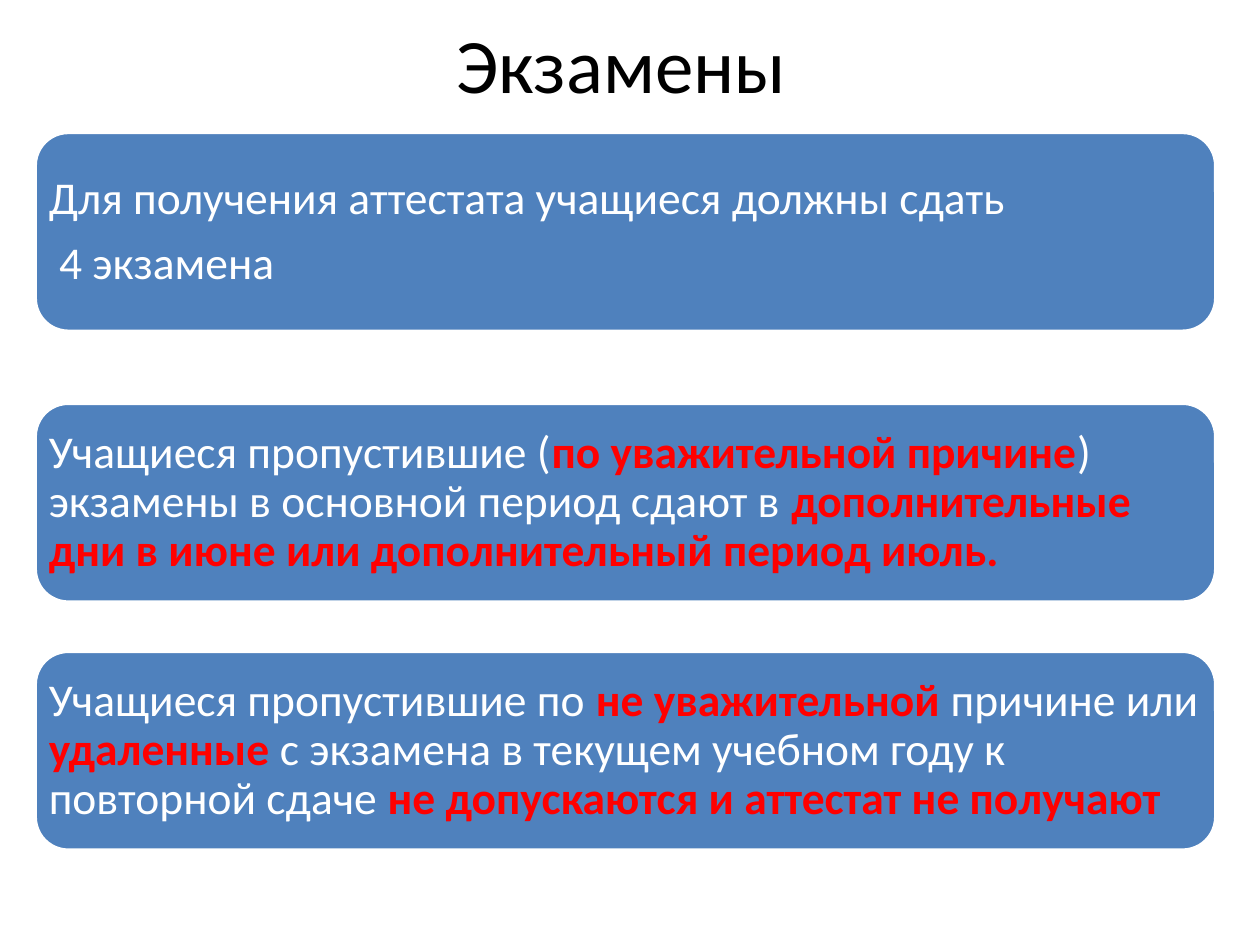
from dataclasses import dataclass

from pptx import Presentation
from pptx.dml.color import RGBColor as Color
from pptx.enum.shapes import MSO_SHAPE as Shape
from pptx.enum.text import MSO_ANCHOR as Anchor, PP_ALIGN as Align
from pptx.util import Cm, Pt


@dataclass(frozen=True)
class Theme:
    font: str = "Calibri"
    title_size: int = 44
    body_size: int = 26
    title: str = "000000"
    card: str = "4F81BD"
    text: str = "FFFFFF"
    accent: str = "FF0000"
    edge: str = "FFFFFF"


THEME = Theme()
CARD_LEFT, CARD_WIDTH, CARD_HEIGHT = 0.71, 23.8, 4.01

PLAIN, STRONG = False, True
RULES = [
    (2.67, [
        [("Для получения аттестата учащиеся должны сдать", PLAIN)],
        [(" 4 экзамена", PLAIN)],
    ]),
    (8.13, [[
        ("Учащиеся пропустившие (", PLAIN),
        ("по уважительной причине", STRONG),
        (") экзамены в основной период сдают в ", PLAIN),
        ("дополнительные дни в июне или дополнительный период июль.", STRONG),
    ]]),
    (13.13, [[
        ("Учащиеся пропустившие по ", PLAIN),
        ("не уважительной ", STRONG),
        ("причине или ", PLAIN),
        ("удаленные", STRONG),
        (" с экзамена в текущем учебном году к повторной сдаче ", PLAIN),
        ("не допускаются и аттестат не получают", STRONG),
    ]]),
]


def style_span(span, size, color, bold=False):
    span.font.name = THEME.font
    span.font.size = Pt(size)
    span.font.bold = bold
    span.font.color.rgb = Color.from_string(color)


def place(shape, box):
    shape.left, shape.top, shape.width, shape.height = (Cm(n) for n in box)


def add_title(page, box, text):
    title = page.shapes.title
    place(title, box)
    frame = title.text_frame
    frame.text = text
    frame.vertical_anchor = Anchor.MIDDLE
    para = frame.paragraphs[0]
    para.alignment = Align.CENTER
    style_span(para.runs[0], THEME.title_size, THEME.title)


def add_card(page, box, paragraphs):
    card = page.shapes.add_shape(Shape.ROUNDED_RECTANGLE, *(Cm(n) for n in box))
    card.shadow.inherit = False
    card.fill.solid()
    card.fill.fore_color.rgb = Color.from_string(THEME.card)
    card.line.color.rgb = Color.from_string(THEME.edge)
    card.line.width = Pt(2)

    frame = card.text_frame
    frame.word_wrap = True
    frame.vertical_anchor = Anchor.MIDDLE
    frame.margin_left = frame.margin_right = Cm(0.08)
    frame.margin_top = frame.margin_bottom = Cm(0.08)
    for index, parts in enumerate(paragraphs):
        para = frame.add_paragraph() if index else frame.paragraphs[0]
        para.alignment = Align.LEFT
        para.line_spacing = 0.9
        para.space_after = Pt(THEME.body_size * 0.35)
        for text, strong in parts:
            span = para.add_run()
            span.text = text
            color = THEME.accent if strong else THEME.text
            style_span(span, THEME.body_size, color, strong)


def main():
    deck = Presentation()
    deck.slide_width, deck.slide_height = Cm(25.4), Cm(19.05)
    page = deck.slides.add_slide(deck.slide_layouts[5])
    add_title(page, (1.27, 0, 22.86, 2.51), "Экзамены ")
    for top, paragraphs in RULES:
        add_card(page, (CARD_LEFT, top, CARD_WIDTH, CARD_HEIGHT), paragraphs)
    deck.save("out.pptx")


if __name__ == "__main__":
    main()
